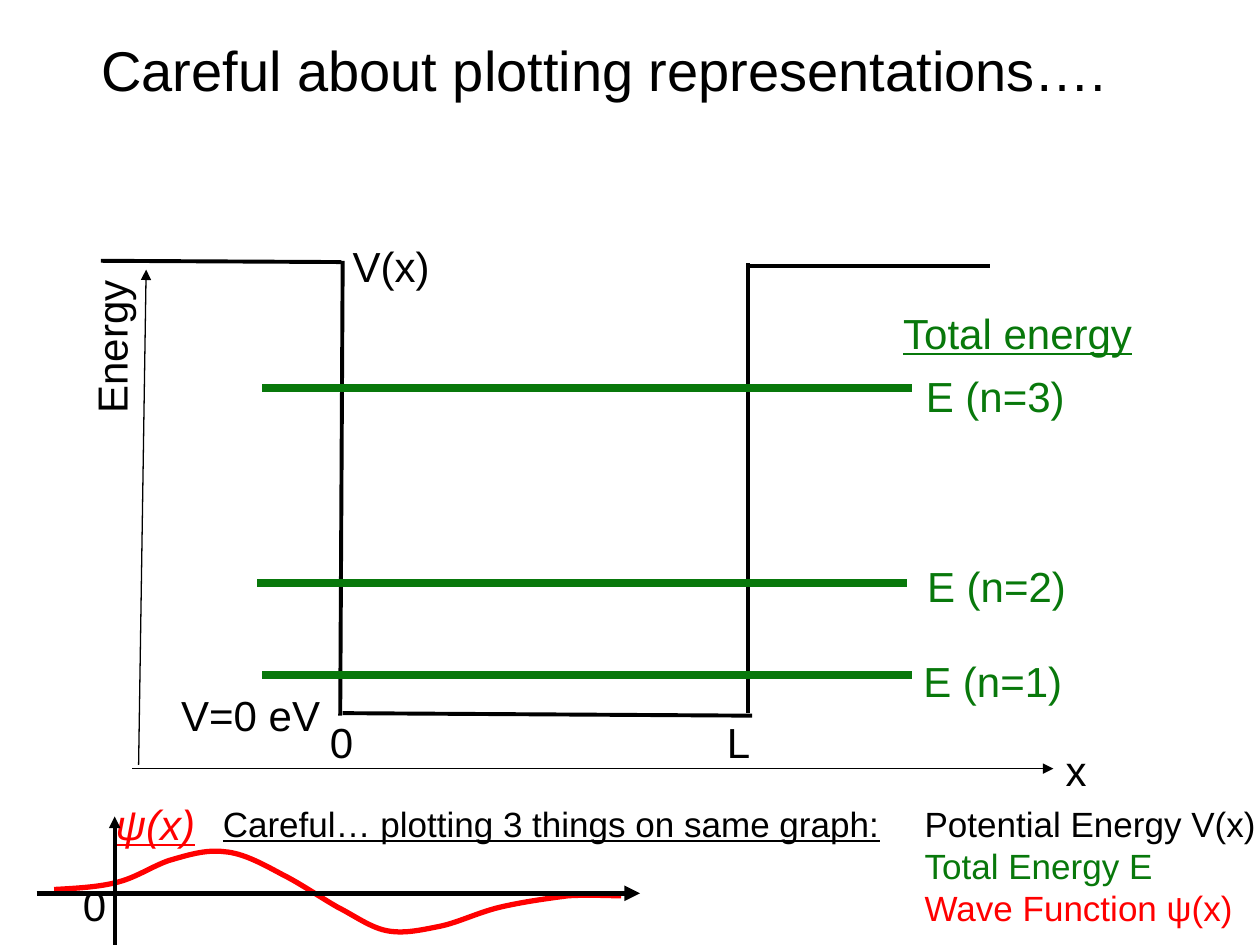
from lxml import etree
from pptx import Presentation
from pptx.dml.color import RGBColor
from pptx.enum.shapes import MSO_CONNECTOR
from pptx.enum.text import MSO_AUTO_SIZE, PP_ALIGN
from pptx.oxml.ns import qn
from pptx.util import Inches, Pt

STRAIGHT = MSO_CONNECTOR.STRAIGHT
FIT_SHAPE = MSO_AUTO_SIZE.SHAPE_TO_FIT_TEXT
CENTER = PP_ALIGN.CENTER
BLACK = RGBColor(0x00, 0x00, 0x00)
GREEN = RGBColor(0x08, 0x78, 0x0B)
RED = RGBColor(0xFF, 0x00, 0x00)
COLUMNS, ROWS = 100, 75


class Plot:
    """Draw styled elements on one slide, placed on a grid of 100 by 75 cells."""

    font = "Arial"

    def __init__(self, deck):
        self.slide = deck.slides.add_slide(deck.slide_layouts[6])
        self.cell_width = deck.slide_width / COLUMNS
        self.cell_height = deck.slide_height / ROWS

    def place(self, column, row):
        return round(column * self.cell_width), round(row * self.cell_height)

    def run(self, paragraph, words, color=BLACK, size=24, italic=None, underline=None):
        run = paragraph.add_run()
        run.text = words
        run.font.name = self.font
        run.font.size = Pt(size)
        run.font.color.rgb = color
        run.font.italic = italic
        run.font.underline = underline

    def box(self, column, row, width, height=5, wrap=False):
        area = self.slide.shapes.add_textbox(
            *self.place(column, row), *self.place(width, height))
        area.text_frame.word_wrap = wrap
        area.text_frame.auto_size = FIT_SHAPE
        return area

    def label(self, words, column, row, width, rotation=0, **style):
        area = self.box(column, row, width)
        area.rotation = rotation
        self.run(area.text_frame.paragraphs[0], words, **style)

    def title(self, words):
        area = self.box(4.2, 4.2, 87.6, 4.6, wrap=True)
        heading = area.text_frame.paragraphs[0]
        heading.alignment = CENTER
        heading.line_spacing = 0.6
        heading.space_before = Pt(4)
        self.run(heading, words, size=32)

    def tabbed_lines(self, lines, column, row, width, height, tab):
        frame = self.box(column, row, width, height, wrap=True).text_frame
        for number, parts in enumerate(lines):
            line = frame.add_paragraph() if number else frame.paragraphs[0]
            stops = etree.SubElement(line._p.get_or_add_pPr(), qn("a:tabLst"))
            etree.SubElement(stops, qn("a:tab"), pos=str(self.place(tab, 0)[0]), algn="l")
            for words, style in parts:
                self.run(line, words, size=20, **style)

    def line(self, start, end, color=BLACK, weight=2.25, arrow=False):
        stroke = self.slide.shapes.add_connector(
            STRAIGHT, *self.place(*start), *self.place(*end))
        stroke.line.color.rgb = color
        stroke.line.width = Pt(weight)
        if arrow:
            etree.SubElement(stroke.line._get_or_add_ln(), qn("a:tailEnd"), type="triangle")
        etree.SubElement(stroke._element.spPr, qn("a:effectLst"))

    def curve(self, points, color, weight):
        start, *rest = [self.place(*point) for point in points]
        builder = self.slide.shapes.build_freeform(*start)
        builder.add_line_segments(rest, close=False)
        wave = builder.convert_to_shape()
        wave.shadow.inherit = False
        wave.fill.background()
        wave.line.color.rgb = color
        wave.line.width = Pt(weight)
        outline = next(wave._element.iter(qn("a:path")))
        segments = outline.findall(qn("a:lnTo"))
        for first in range(0, len(segments), 3):
            bezier = etree.SubElement(outline, qn("a:cubicBezTo"))
            for segment in segments[first:first + 3]:
                bezier.append(segment[0])
                outline.remove(segment)


def main():
    deck = Presentation()
    deck.slide_width, deck.slide_height = Inches(10), Inches(7.5)
    plot = Plot(deck)
    plot.title("Careful about plotting representations….")

    well = [
        ((8, 20.7), (27.1, 20.8)),
        ((27.2, 20.7), (27, 56.8)),
        ((27.2, 56.6), (59.7, 56.8)),
        ((59.4, 20.9), (59.4, 56.6)),
        ((59.5, 21.1), (78.6, 21.1)),
    ]
    for start, end in well:
        plot.line(start, end)
    plot.label("V(x)", 27, 18.6, 8.1)
    plot.label("V=0 eV", 13.4, 54.2, 13)
    plot.label("0", 25.2, 56.4, 3.9)
    plot.label("L", 56.7, 56.4, 3.9)

    plot.line((11, 60.7), (11.6, 21.4), weight=0.75, arrow=True)
    plot.label("Energy", 2.5, 25, 12.6, rotation=270)
    plot.line((10.5, 61), (83.6, 61), weight=0.75, arrow=True)
    plot.label("x", 83.6, 58.6, 3.7)

    levels = [(1, 20.8, 53.6, 72.3, 51.5), (2, 20.4, 46.3, 72.6, 44), (3, 20.8, 30.8, 72.5, 28.9)]
    for level, left, height, label_left, label_top in levels:
        plot.line((left, height), (left + 51.6, height), GREEN, 4.5)
        plot.label(f"E (n={level})", label_left, label_top, 13, color=GREEN)
    plot.label("Total energy", 70.7, 23.9, 20.5, color=GREEN, underline=True)

    wave = [
        (4.3, 70.6),
        (6.1, 70.5), (7.9, 70.4), (9.4, 70),
        (10.9, 69.6), (12, 68.8), (13.4, 68.3),
        (14.8, 67.9), (16.3, 67.4), (17.8, 67.6),
        (19.3, 67.7), (20.9, 68.6), (22.4, 69.4),
        (23.8, 70.1), (25.4, 71.2), (26.8, 72),
        (28.2, 72.7), (29.5, 73.7), (30.9, 73.9),
        (32.2, 74.1), (33.5, 73.8), (35, 73.5),
        (36.4, 73.2), (38, 72.4), (39.7, 72),
        (41.4, 71.6), (43.5, 71.3), (45.1, 71.1),
        (46.7, 71), (48.4, 71.1), (49.3, 71.1),
    ]
    plot.curve(wave, RED, 3)
    plot.label("ψ(x)", 8.2, 62.9, 9.3, color=RED, italic=True, underline=True)
    plot.line((9.1, 75), (9.1, 64.8), arrow=True)
    plot.line((2.9, 70.9), (50.8, 70.9), weight=3, arrow=True)
    plot.label("0", 5.6, 69.3, 3.9)

    summary = [
        [("Careful… plotting 3 things on same graph:", {"underline": True}),
         ("\tPotential Energy V(x)", {})],
        [("\t", {}), ("Total Energy E", {"color": GREEN})],
        [("\t", {}), ("Wave Function ψ(x)", {"color": RED})],
    ]
    plot.tabbed_lines(summary, 16.7, 63.2, 85, 11, tab=55.7)
    deck.save("out.pptx")


if __name__ == "__main__":
    main()
